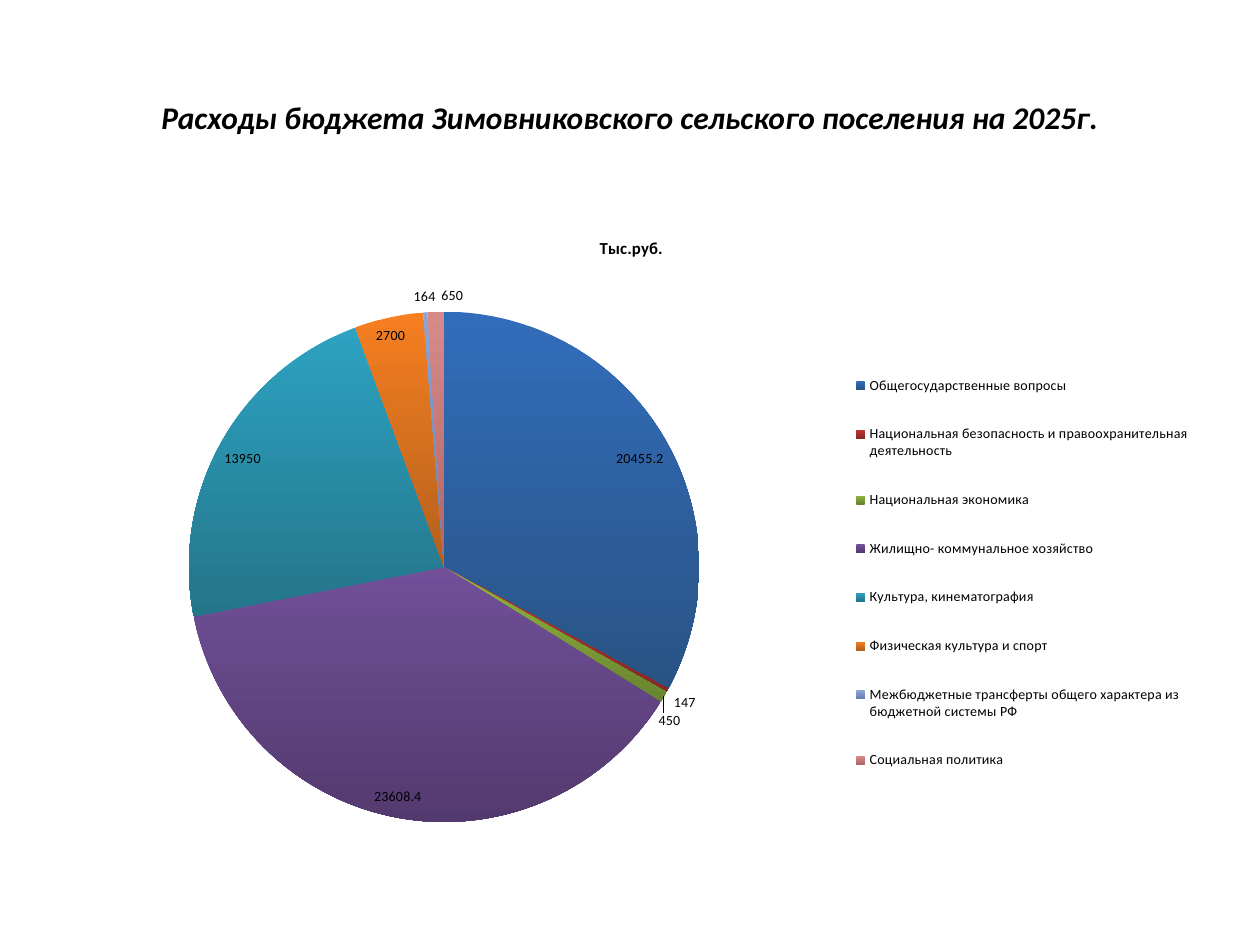
from lxml import etree
from pptx import Presentation
from pptx.chart.data import CategoryChartData
from pptx.dml.color import RGBColor
from pptx.enum.chart import XL_CHART_TYPE, XL_LABEL_POSITION, XL_LEGEND_POSITION
from pptx.enum.text import MSO_ANCHOR, PP_ALIGN
from pptx.oxml.ns import qn
from pptx.util import Inches, Pt

PIE = XL_CHART_TYPE.PIE
BEST_FIT = XL_LABEL_POSITION.BEST_FIT
RIGHT = XL_LEGEND_POSITION.RIGHT
MIDDLE = MSO_ANCHOR.MIDDLE
CENTER = PP_ALIGN.CENTER
TITLE_ONLY = 5
DOWNWARD = 270

# Category, value, gradient top and bottom colours
EXPENSES = [
    ("Общегосударственные вопросы", 20455.2, "326DBB", "295384"),
    ("Национальная безопасность и правоохранительная деятельность", 147, "BD3431", "862927"),
    ("Национальная экономика", 450, "8FB63F", "69842F"),
    ("Жилищно- коммунальное хозяйство", 23608.4, "714F99", "533A6E"),
    ("Культура, кинематография", 13950, "2DA2C1", "24758A"),
    ("Физическая культура и спорт", 2700, "F67F21", "B4601C"),
    ("Межбюджетные трансферты общего характера из бюджетной системы РФ", 164, "8AA5D6", "6580B0"),
    ("Социальная политика", 650, "D68A89", "B06564"),
]


def color(value):
    return RGBColor.from_string(value)


class SlideBuilder:
    """Holds the style and the current slide."""

    font = {"name": "Calibri", "color": "000000"}

    def __init__(self, presentation):
        self.width = presentation.slide_width
        self.height = presentation.slide_height
        layout = presentation.slide_layouts[TITLE_ONLY]
        self.slide = presentation.slides.add_slide(layout)

    def box(self, left, top, width, height):
        """Turn shares of the slide's size into lengths."""
        return (int(left * self.width), int(top * self.height),
                int(width * self.width), int(height * self.height))

    def style(self, font, size, **extra):
        values = {**self.font, "size": Pt(size), **extra}
        font.color.rgb = color(values.pop("color"))
        for name, value in values.items():
            setattr(font, name, value)

    def title(self, text, shares):
        shape = self.slide.shapes.title
        shape.left, shape.top, shape.width, shape.height = self.box(*shares)
        shape.text_frame.vertical_anchor = MIDDLE
        paragraph = shape.text_frame.paragraphs[0]
        paragraph.alignment = CENTER
        run = paragraph.add_run()
        run.text = text
        self.style(run.font, 18, bold=True, italic=True)

    def place(self, element, shares, inner=False):
        """Set a manual layout, in shares of the chart's size."""
        layout = element.find(qn("c:layout"))
        if layout is None:
            layout = etree.Element(qn("c:layout"))
            if inner:
                element.insert(0, layout)
            else:
                element.find(qn("c:legendPos")).addnext(layout)
        for child in list(layout):
            layout.remove(child)
        manual = etree.SubElement(layout, qn("c:manualLayout"))
        settings = {"layoutTarget": "inner"} if inner else {}
        settings.update(xMode="edge", yMode="edge", **dict(zip("xywh", shares)))
        for name, value in settings.items():
            etree.SubElement(manual, qn("c:" + name)).set("val", str(value))

    def pie(self, heading, rows, shares, plot_shares, legend_shares):
        data = CategoryChartData()
        data.categories = [row[0] for row in rows]
        data.add_series("Series 1", [row[1] for row in rows])
        chart = self.slide.shapes.add_chart(PIE, *self.box(*shares), data).chart
        self.style(chart.font, 8)

        # Heading
        chart.has_title = True
        frame = chart.chart_title.text_frame
        frame.text = heading
        self.style(frame.paragraphs[0].runs[0].font, 9.6, bold=True)

        # Slices
        plot = chart.plots[0]
        plot.vary_by_categories = True
        for index, (_, _, *gradient) in enumerate(rows):
            fill = plot.series[0].points[index].format.fill
            fill.gradient()
            fill.gradient_angle = DOWNWARD
            for stop, value in zip(fill.gradient_stops, gradient):
                stop.color.rgb = color(value)

        # Value labels
        plot.has_data_labels = True
        labels = plot.data_labels
        labels.show_value = True
        labels.position = BEST_FIT
        self.style(labels.font, 8)

        # Legend and layout
        chart.has_legend = True
        chart.legend.position = RIGHT
        chart.legend.include_in_layout = False
        self.style(chart.legend.font, 8)
        plot_area = chart.element.find(".//" + qn("c:plotArea"))
        self.place(plot_area, plot_shares, inner=True)
        self.place(chart.element.find(".//" + qn("c:legend")), legend_shares)


def main():
    presentation = Presentation()
    presentation.slide_width = Inches(10)
    presentation.slide_height = Inches(7.5)
    builder = SlideBuilder(presentation)
    builder.title("Расходы бюджета Зимовниковского сельского поселения на 2025г.",
                  (0.05, 0.04, 0.9, 1 / 6))
    builder.pie("Тыс.руб.", EXPENSES, (0.051, 0.227, 0.9, 0.66),
                plot_shares=(0.11, 0.15, 0.45, 0.83),
                legend_shares=(0.69, 0.21, 0.31, 0.73))
    presentation.save("out.pptx")


if __name__ == "__main__":
    main()
